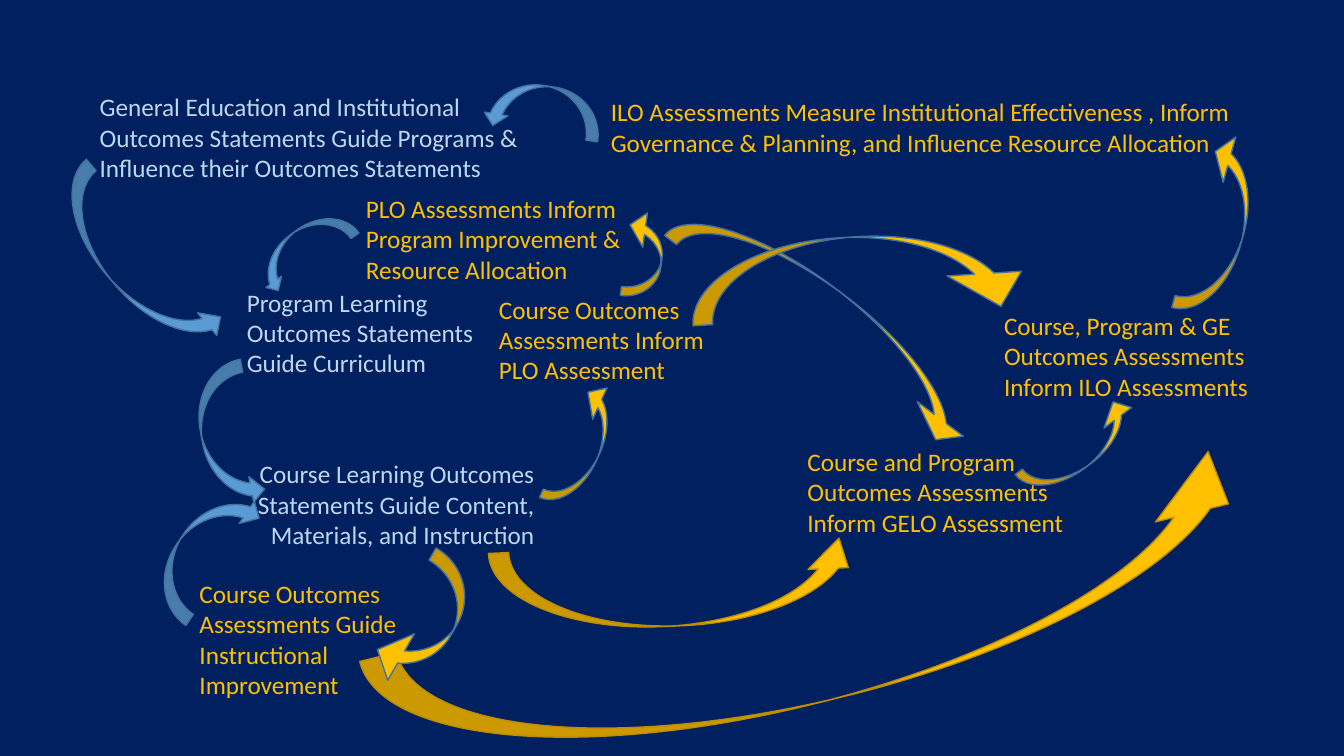
"""Build a slide showing how outcomes statements and assessments feed one another."""
import pptx
import pptx.dml.color
import pptx.enum.shapes
import pptx.enum.text
import pptx.util

Inches = pptx.util.Inches
RGBColor = pptx.dml.color.RGBColor
ALIGN = pptx.enum.text.PP_ALIGN

NAVY = RGBColor(0x00, 0x20, 0x60)
GOLD = RGBColor(0xFF, 0xC0, 0x00)
DARK_GOLD = RGBColor(0xBD, 0x8E, 0x00)
BLUE = RGBColor(0x5B, 0x9B, 0xD5)
DARK_BLUE = RGBColor(0x43, 0x73, 0x9E)
PALE_BLUE = RGBColor(0xBD, 0xD7, 0xEE)

FONT_FORMAT = {"name": "Calibri", "size": pptx.util.Pt(18)}
FRAME_FORMAT = {
    "word_wrap": True,
    "auto_size": pptx.enum.text.MSO_AUTO_SIZE.SHAPE_TO_FIT_TEXT,
}

DEFAULT_CURVE = (0.25, 0.5, 0.25)
SWEEP_CURVE = (0.25, 0.5, 0.37)
WIDE_CURVE = (0.25, 0.95, 0.43)
SLIM_CURVE = (0.25, 0.95, 0.32)

statements = [
    (2.35, 2.8, 2.6, 1.01, PALE_BLUE, ALIGN.LEFT, 0.1,
     ["Program Learning Outcomes Statements", "Guide Curriculum"]),
    (2.41, 4.5, 3.23, 1.01, PALE_BLUE, ALIGN.RIGHT, 0.34,
     ["Course Learning Outcomes Statements Guide Content, Materials, and Instruction"]),
    (1.88, 5.69, 2.21, 1.31, GOLD, ALIGN.LEFT, 0.1,
     ["Course Outcomes Assessments Guide Instructional", "Improvement"]),
    (4.85, 2.87, 2.4, 1.01, GOLD, ALIGN.LEFT, 0.1,
     ["Course Outcomes Assessments Inform", "PLO Assessment"]),
    (7.91, 4.38, 3.16, 1.01, GOLD, ALIGN.LEFT, 0.1,
     ["Course and Program Outcomes Assessments Inform GELO Assessment"]),
    (0.89, 0.86, 4.46, 1.01, PALE_BLUE, ALIGN.LEFT, 0.1,
     ["General Education and Institutional Outcomes Statements Guide Programs & "
      "Influence their Outcomes Statements"]),
    (9.86, 3.03, 3.16, 1.01, GOLD, ALIGN.LEFT, 0.1,
     ["Course, Program & GE Outcomes Assessments Inform ILO Assessments"]),
    (3.53, 1.87, 3.19, 1.01, GOLD, ALIGN.LEFT, 0.1,
     ["PLO Assessments Inform Program Improvement & Resource Allocation"]),
    (5.96, 0.91, 6.46, 0.71, GOLD, ALIGN.LEFT, 0.1,
     ["ILO Assessments Measure Institutional Effectiveness , Inform "
      "Governance & Planning, and Influence Resource Allocation"]),
]

arrows = [
    (7.39, 1.68, 1.49, 9.04, 256.1, None, SWEEP_CURVE, GOLD, DARK_GOLD),
    (6.3, 3.97, 0.8, 3.68, 267.5, None, SWEEP_CURVE, GOLD, DARK_GOLD),
    (2, 3.6, 0.52, 1.44, 349.4, None, DEFAULT_CURVE, BLUE, DARK_BLUE),
    (1.05, 1.51, 0.59, 2.2, 319.6, None, DEFAULT_CURVE, BLUE, DARK_BLUE),
    (3.93, 5.48, 0.56, 1.43, 30, "flipH", WIDE_CURVE, GOLD, DARK_BLUE),
    (1.76, 4.76, 0.53, 1.42, 34.3, "flipV", DEFAULT_CURVE, BLUE, DARK_BLUE),
    (11.86, 1.31, 0.49, 1.84, 195.6, None, SLIM_CURVE, GOLD, DARK_BLUE),
    (7.93, 1.37, 0.6, 3.65, 307, "flipH", SLIM_CURVE, GOLD, DARK_BLUE),
    (5.61, 3.75, 0.36, 1.32, 204.7, None, WIDE_CURVE, GOLD, DARK_BLUE),
    (6.21, 2.08, 0.36, 0.88, 187.9, None, WIDE_CURVE, GOLD, DARK_BLUE),
    (2.82, 1.93, 0.38, 1.08, 54.5, None, DEFAULT_CURVE, BLUE, DARK_BLUE),
    (5.15, 0.5, 0.47, 1.17, 98.9, None, DEFAULT_CURVE, BLUE, DARK_BLUE),
    (8.17, 1.02, 0.78, 3.43, 266.4, "flipH", WIDE_CURVE, GOLD, DARK_BLUE),
    (10.55, 3.75, 0.36, 1.38, 233.4, None, WIDE_CURVE, GOLD, DARK_BLUE),
]

presentation = pptx.Presentation()
presentation.slide_width = Inches(13.33)
presentation.slide_height = Inches(7.5)
slide = presentation.slides.add_slide(presentation.slide_layouts[6])
slide.background.fill.solid()
slide.background.fill.fore_color.rgb = NAVY

for left, top, width, height, color, alignment, margin, lines in statements:
    box = slide.shapes.add_textbox(Inches(left), Inches(top), Inches(width), Inches(height))
    frame = box.text_frame
    for attribute, value in FRAME_FORMAT.items():
        setattr(frame, attribute, value)
    frame.margin_right = Inches(margin)
    frame.text = "\n".join(lines)
    for paragraph in frame.paragraphs:
        paragraph.alignment = alignment
        font = paragraph.runs[0].font
        for attribute, value in FONT_FORMAT.items():
            setattr(font, attribute, value)
        font.color.rgb = color

for left, top, width, height, rotation, flip, curve, fill, outline in arrows:
    arrow = slide.shapes.add_shape(
        pptx.enum.shapes.MSO_SHAPE.CURVED_RIGHT_ARROW,
        Inches(left), Inches(top), Inches(width), Inches(height))
    arrow.shadow.inherit = False
    arrow.rotation = rotation
    if flip:
        arrow.element.spPr.xfrm.set(flip, "1")
    for index, amount in enumerate(curve):
        arrow.adjustments[index] = amount
    arrow.fill.solid()
    arrow.fill.fore_color.rgb = fill
    arrow.line.color.rgb = outline
    arrow.line.width = pptx.util.Pt(1)

presentation.save("out.pptx")
